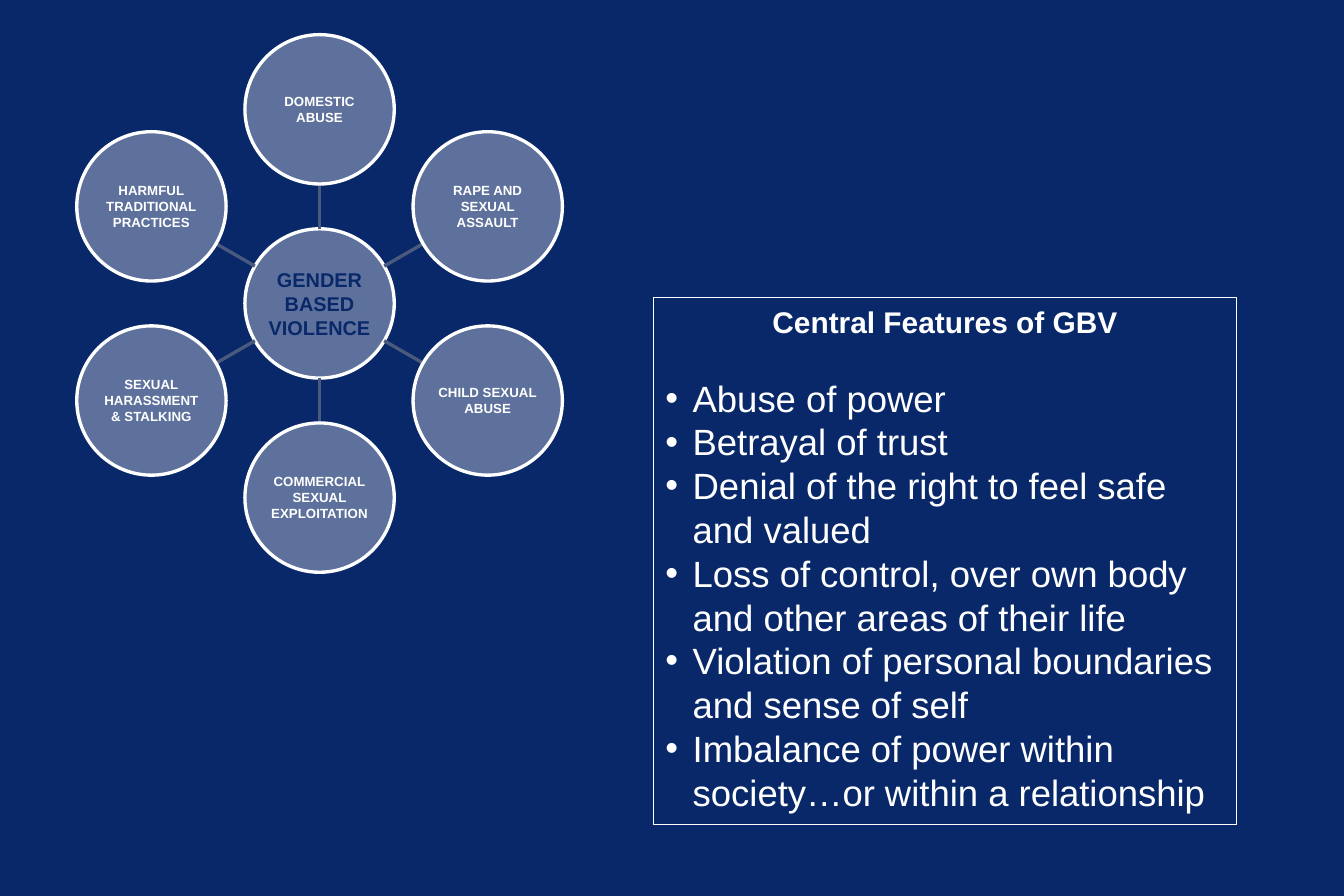
import math
from dataclasses import dataclass

import lxml.etree
import pptx
import pptx.dml.color
import pptx.enum.shapes
import pptx.enum.text
import pptx.oxml.ns
import pptx.util

PX = 9144  # EMU per px, 100 px to the inch


@dataclass(frozen=True)
class Theme:
    font: str = "Arial"
    background: str = "092869"
    circle: str = "5D719C"
    spoke: str = "4A5A7D"
    white: str = "FFFFFF"
    hub_size: int = 12
    circle_size: int = 8
    heading_size: int = 18
    feature_size: int = 22


@dataclass(frozen=True)
class Box:
    left: int
    top: int
    width: int
    height: int


THEME = Theme()
HUB = "GENDER BASED VIOLENCE"
FORMS = [
    ["DOMESTIC", "ABUSE"],
    ["RAPE AND", "SEXUAL ASSAULT"],
    ["CHILD SEXUAL", "ABUSE"],
    ["COMMERCIAL", "SEXUAL", "EXPLOITATION"],
    ["SEXUAL", "HARASSMENT", "& STALKING"],
    ["HARMFUL", "TRADITIONAL", "PRACTICES"],
]
HEADING = "Central Features of GBV"
FEATURES = [
    "Abuse of power",
    "Betrayal of trust",
    "Denial of the right to feel safe and valued",
    "Loss of control, over own body and other areas of their life",
    "Violation of personal boundaries and sense of self",
    "Imbalance of power within society…or within a relationship",
]


def px(length):
    return pptx.util.Emu(round(length * PX))


def rgb(color):
    return pptx.dml.color.RGBColor.from_string(color)


def add_run(para, text, size, color, bold=False):
    span = para.add_run()
    span.text = text
    span.font.name = THEME.font
    span.font.size = pptx.util.Pt(size)
    span.font.bold = bold
    span.font.color.rgb = rgb(color)


def next_para(frame, index):
    return frame.add_paragraph() if index else frame.paragraphs[0]


def add_circle(slide, center, diameter, lines, size, color):
    x, y = center
    circle = slide.shapes.add_shape(
        pptx.enum.shapes.MSO_SHAPE.OVAL, px(x - diameter / 2),
        px(y - diameter / 2), px(diameter), px(diameter))
    circle.shadow.inherit = False
    circle.fill.solid()
    circle.fill.fore_color.rgb = rgb(THEME.circle)
    circle.line.color.rgb = rgb(THEME.white)
    circle.line.width = pptx.util.Pt(2)
    frame = circle.text_frame
    frame.word_wrap = True
    frame.vertical_anchor = pptx.enum.text.MSO_ANCHOR.MIDDLE
    frame.margin_left = frame.margin_right = px(1)
    frame.margin_top = frame.margin_bottom = px(1)
    for index, line in enumerate(lines):
        para = next_para(frame, index)
        para.alignment = pptx.enum.text.PP_ALIGN.CENTER
        add_run(para, line, size, color, bold=True)


def add_spoke(slide, start, end):
    spoke = slide.shapes.add_connector(
        pptx.enum.shapes.MSO_CONNECTOR.STRAIGHT, *map(px, start + end))
    spoke.line.color.rgb = rgb(THEME.spoke)
    spoke.line.width = pptx.util.Pt(2)
    lxml.etree.SubElement(spoke._element.spPr, pptx.oxml.ns.qn("a:effectLst"))


def add_wheel(slide, box, diameter):
    """Place the hub at the middle of the box and the forms clockwise from the top."""
    center_x = box.left + box.width / 2
    center_y = box.top + box.height / 2
    orbit = (box.height - diameter) / 2

    def polar(radius, angle):
        return (center_x + radius * math.sin(angle),
                center_y - radius * math.cos(angle))

    add_circle(slide, (center_x, center_y), diameter, [HUB],
               THEME.hub_size, THEME.background)
    for index, lines in enumerate(FORMS):
        angle = math.tau * index / len(FORMS)
        add_spoke(slide, polar(diameter / 2, angle),
                  polar(orbit - diameter / 2, angle))
        add_circle(slide, polar(orbit, angle), diameter, lines,
                   THEME.circle_size, THEME.white)


def set_bullet(para, indent):
    properties = para._p.get_or_add_pPr()
    properties.set("marL", str(px(indent)))
    properties.set("indent", str(-px(indent)))
    font = lxml.etree.SubElement(properties, pptx.oxml.ns.qn("a:buFont"))
    font.set("typeface", THEME.font)
    bullet = lxml.etree.SubElement(properties, pptx.oxml.ns.qn("a:buChar"))
    bullet.set("char", "•")


def add_features(slide, box):
    panel = slide.shapes.add_shape(
        pptx.enum.shapes.MSO_SHAPE.RECTANGLE, px(box.left), px(box.top),
        px(box.width), px(box.height))
    panel.shadow.inherit = False
    panel.fill.background()
    panel.line.color.rgb = rgb(THEME.white)
    panel.line.width = pptx.util.Pt(0.75)
    frame = panel.text_frame
    frame.word_wrap = True
    frame.vertical_anchor = pptx.enum.text.MSO_ANCHOR.TOP
    heading = frame.paragraphs[0]
    heading.alignment = pptx.enum.text.PP_ALIGN.CENTER
    heading.space_after = pptx.util.Pt(22)
    add_run(heading, HEADING, THEME.heading_size, THEME.white, bold=True)
    for feature in FEATURES:
        para = frame.add_paragraph()
        para.alignment = pptx.enum.text.PP_ALIGN.LEFT
        set_bullet(para, 23)
        add_run(para, feature, THEME.feature_size, THEME.white)


def main():
    deck = pptx.Presentation()
    deck.slide_width, deck.slide_height = px(1125), px(750)
    slide = deck.slides.add_slide(deck.slide_layouts[6])
    slide.background.fill.solid()
    slide.background.fill.fore_color.rgb = rgb(THEME.background)
    add_wheel(slide, Box(64, 29, 407, 450), diameter=125)
    add_features(slide, Box(547, 249, 488, 441))
    deck.save("out.pptx")


if __name__ == "__main__":
    main()
